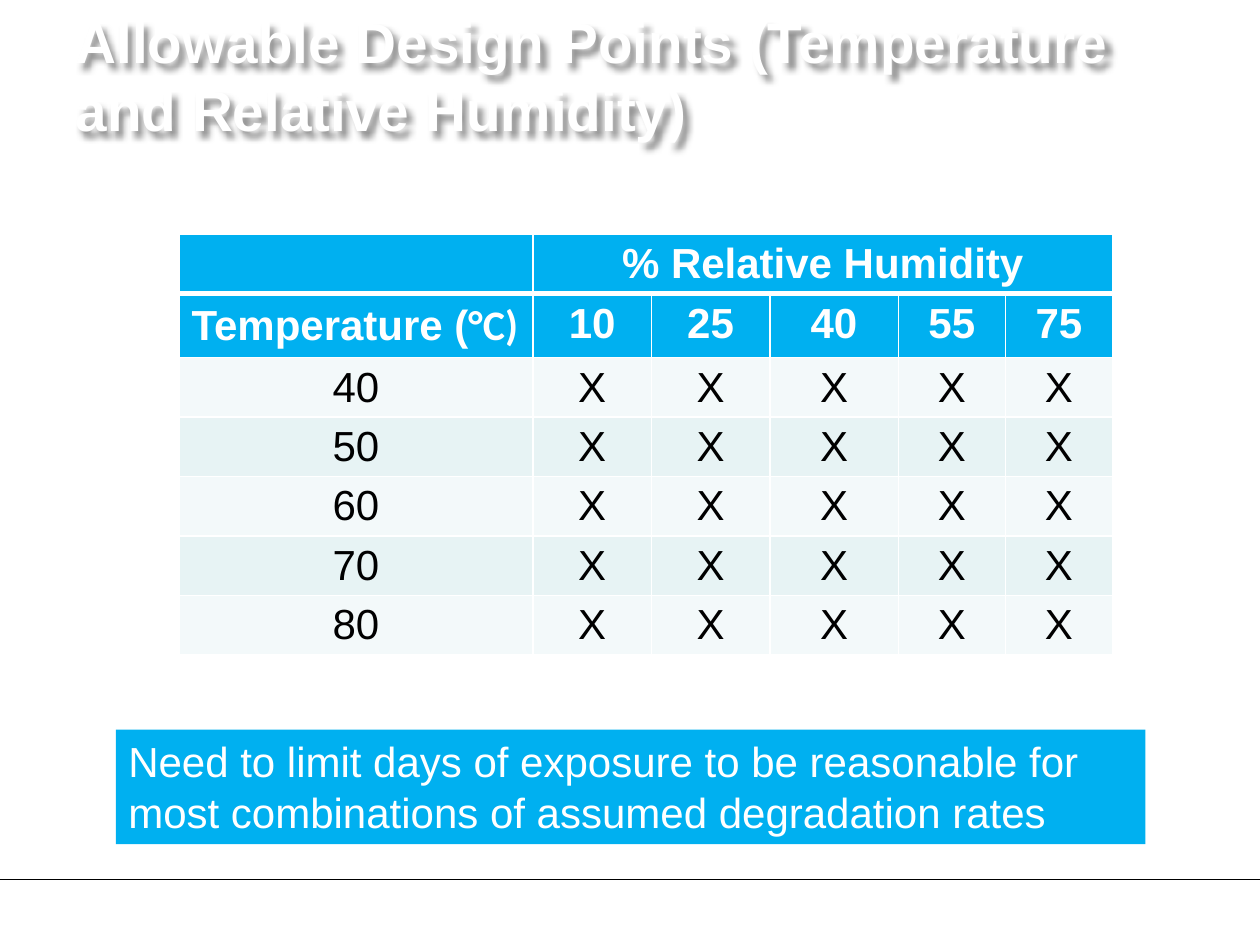
from lxml.etree import SubElement
from pptx import Presentation
from pptx.dml.color import RGBColor
from pptx.enum.shapes import MSO_CONNECTOR, MSO_SHAPE
from pptx.enum.text import MSO_ANCHOR, MSO_AUTO_SIZE, PP_ALIGN
from pptx.oxml.ns import qn
from pptx.util import Inches, Pt

BLUE, WHITE, BLACK = "00B0F0", "FFFFFF", "000000"
BANDS = ("F3F9FA", "E7F3F4")
HUMIDITIES = (10, 25, 40, 55, 75)
TEMPERATURES = (40, 50, 60, 70, 80)
COLUMN_WIDTHS = (2.81, 0.94, 0.94, 1.02, 0.85, 0.85)
ROW_HEIGHT = 0.41


def paint(target, color):
    target.solid()
    target.fore_color.rgb = RGBColor.from_string(color)


def add_span(paragraph, text, size, color, bold=False, font="Arial"):
    span = paragraph.add_run()
    span.text = text
    span.font.name = font
    span.font.size = Pt(size)
    span.font.bold = bold
    span.font.color.rgb = RGBColor.from_string(color)


def add_shadow(shape):
    """Give an unfilled shape a soft shadow, which falls from its text."""
    shape.fill.background()
    effects = SubElement(shape._element.spPr, qn("a:effectLst"))
    shadow = SubElement(effects, qn("a:outerShdw"), blurRad=str(Pt(4)),
                        dist=str(Pt(4)), dir="2700000", algn="tl", rotWithShape="0")
    color = SubElement(shadow, qn("a:srgbClr"), val=BLACK)
    SubElement(color, qn("a:alpha"), val="43000")


def add_title(page, text):
    title = page.shapes.title
    title.left, title.top = Inches(0.5), Inches(-0.03)
    title.width, title.height = Inches(9), Inches(1.25)
    add_shadow(title)
    frame = title.text_frame
    frame.auto_size = MSO_AUTO_SIZE.NONE
    frame.vertical_anchor = MSO_ANCHOR.MIDDLE
    paragraph = frame.paragraphs[0]
    paragraph.alignment = PP_ALIGN.LEFT
    add_span(paragraph, text, 32.4, WHITE, bold=True)


def add_footer_line(page):
    line = page.shapes.add_connector(
        MSO_CONNECTOR.STRAIGHT, Inches(0), Inches(6.98), Inches(10), Inches(6.98))
    line.line.width = Pt(0.5)
    paint(line.line.fill, BLACK)
    SubElement(line._element.spPr, qn("a:effectLst"))


def set_borders(cell, top, bottom):
    """Draw white borders; top and bottom are widths in points."""
    properties = cell._tc.get_or_add_tcPr()
    for side, width in (("L", 1), ("R", 1), ("T", top), ("B", bottom)):
        border = SubElement(properties, qn(f"a:ln{side}"), w=str(Pt(width)))
        fill = SubElement(border, qn("a:solidFill"))
        SubElement(fill, qn("a:srgbClr"), val=WHITE)


def add_design_table(page):
    rows = [["", "% Relative Humidity", "", "", "", ""],
            ["Temperature (", *HUMIDITIES]]
    rows += [[temperature] + ["X"] * len(HUMIDITIES) for temperature in TEMPERATURES]
    table = page.shapes.add_table(
        len(rows), len(COLUMN_WIDTHS), Inches(1.42), Inches(1.86),
        Inches(sum(COLUMN_WIDTHS)), Inches(ROW_HEIGHT * len(rows))).table
    for column, width in zip(table.columns, COLUMN_WIDTHS):
        column.width = Inches(width)
    for row_index, values in enumerate(rows):
        table.rows[row_index].height = Inches(ROW_HEIGHT)
        header = row_index < 2
        for column_index, value in enumerate(values):
            cell = table.cell(row_index, column_index)
            set_borders(cell, top=3 if row_index == 1 else 1,
                        bottom=3 if row_index == 0 else 1)
            paint(cell.fill, BLUE if header else BANDS[row_index % 2])
            if value != "":
                paragraph = cell.text_frame.paragraphs[0]
                paragraph.alignment = PP_ALIGN.CENTER
                add_span(paragraph, str(value), 24, WHITE if header else BLACK, header)
    table.cell(0, 1).merge(table.cell(0, len(HUMIDITIES)))
    label = table.cell(1, 0).text_frame.paragraphs[0]
    label.alignment = PP_ALIGN.LEFT
    add_span(label, "°C)", 24, WHITE, bold=True, font="Calibri")


def add_note(page, text):
    box = page.shapes.add_shape(
        MSO_SHAPE.RECTANGLE, Inches(0.92), Inches(5.79), Inches(8.17), Inches(0.91))
    box.shadow.inherit = False
    paint(box.fill, BLUE)
    box.line.fill.background()
    frame = box.text_frame
    frame.word_wrap = True
    frame.auto_size = MSO_AUTO_SIZE.SHAPE_TO_FIT_TEXT
    frame.vertical_anchor = MSO_ANCHOR.TOP
    paragraph = frame.paragraphs[0]
    paragraph.alignment = PP_ALIGN.LEFT
    add_span(paragraph, text, 24, WHITE)


def main():
    deck = Presentation()
    deck.slide_width, deck.slide_height = Inches(10), Inches(7.5)
    page = deck.slides.add_slide(deck.slide_layouts.get_by_name("Title Only"))
    paint(page.background.fill, WHITE)
    add_footer_line(page)
    add_title(page, "Allowable Design Points (Temperature and Relative Humidity)")
    add_design_table(page)
    add_note(page, "Need to limit days of exposure to be reasonable for "
                   "most combinations of assumed degradation rates")
    deck.save("out.pptx")


if __name__ == "__main__":
    main()
